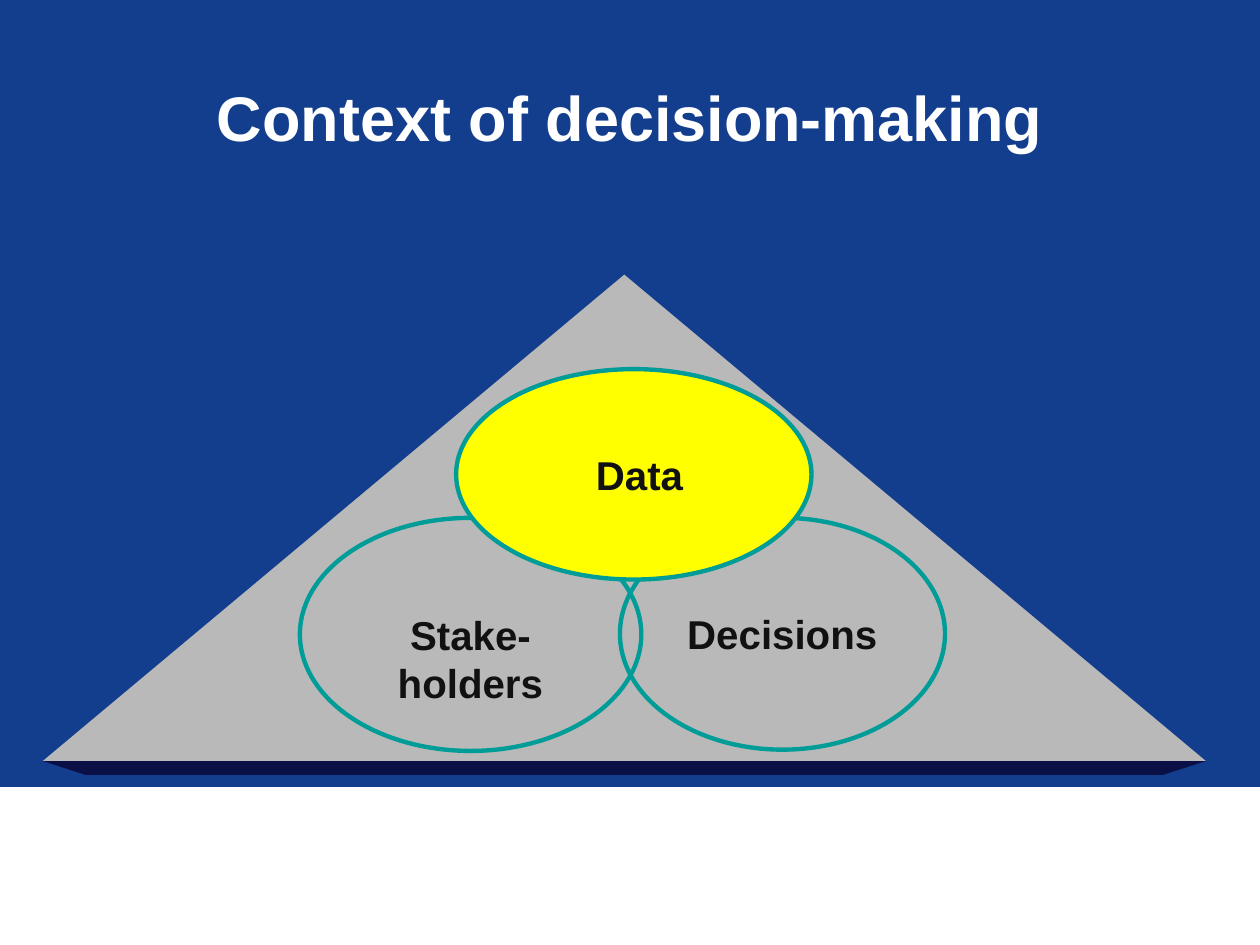
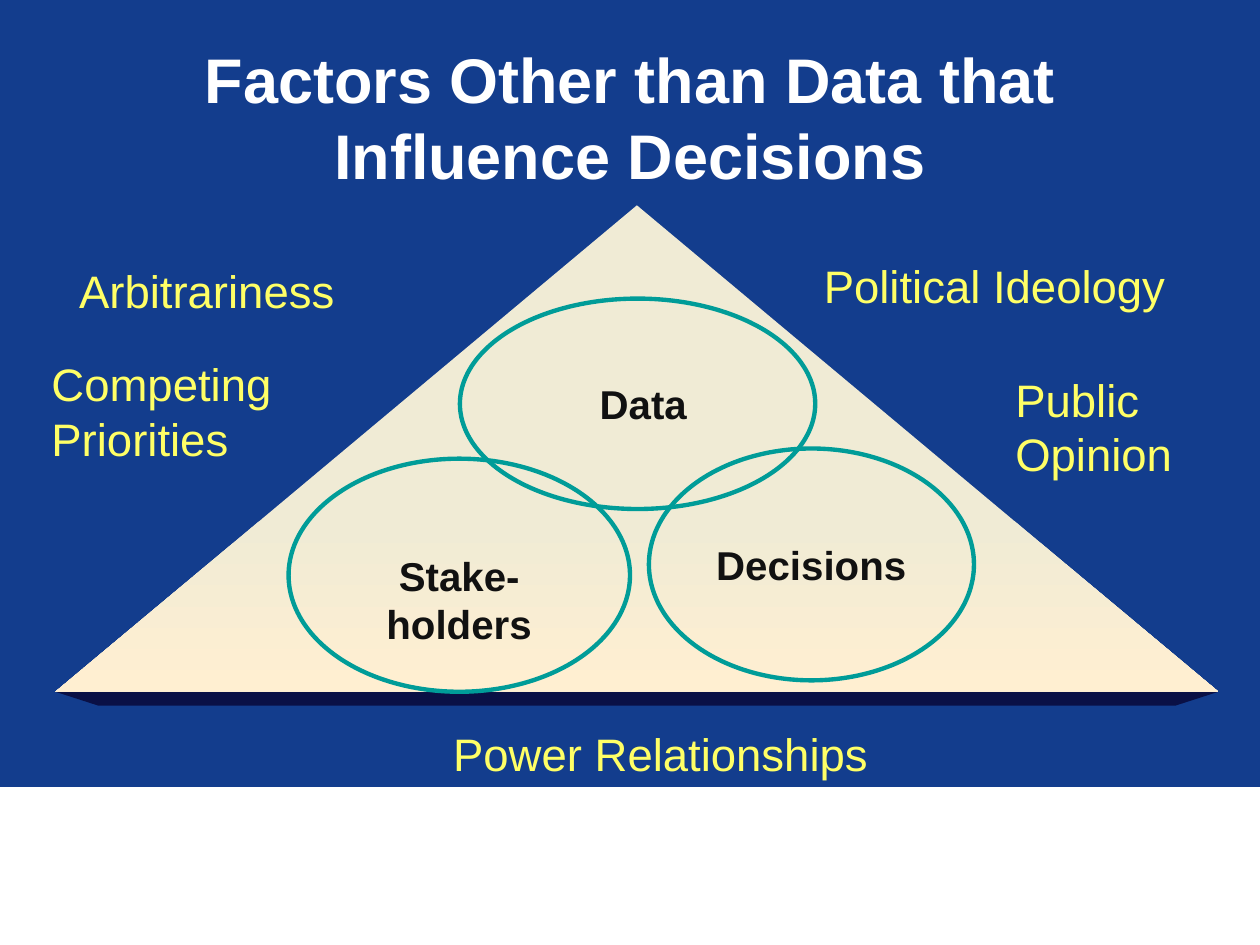
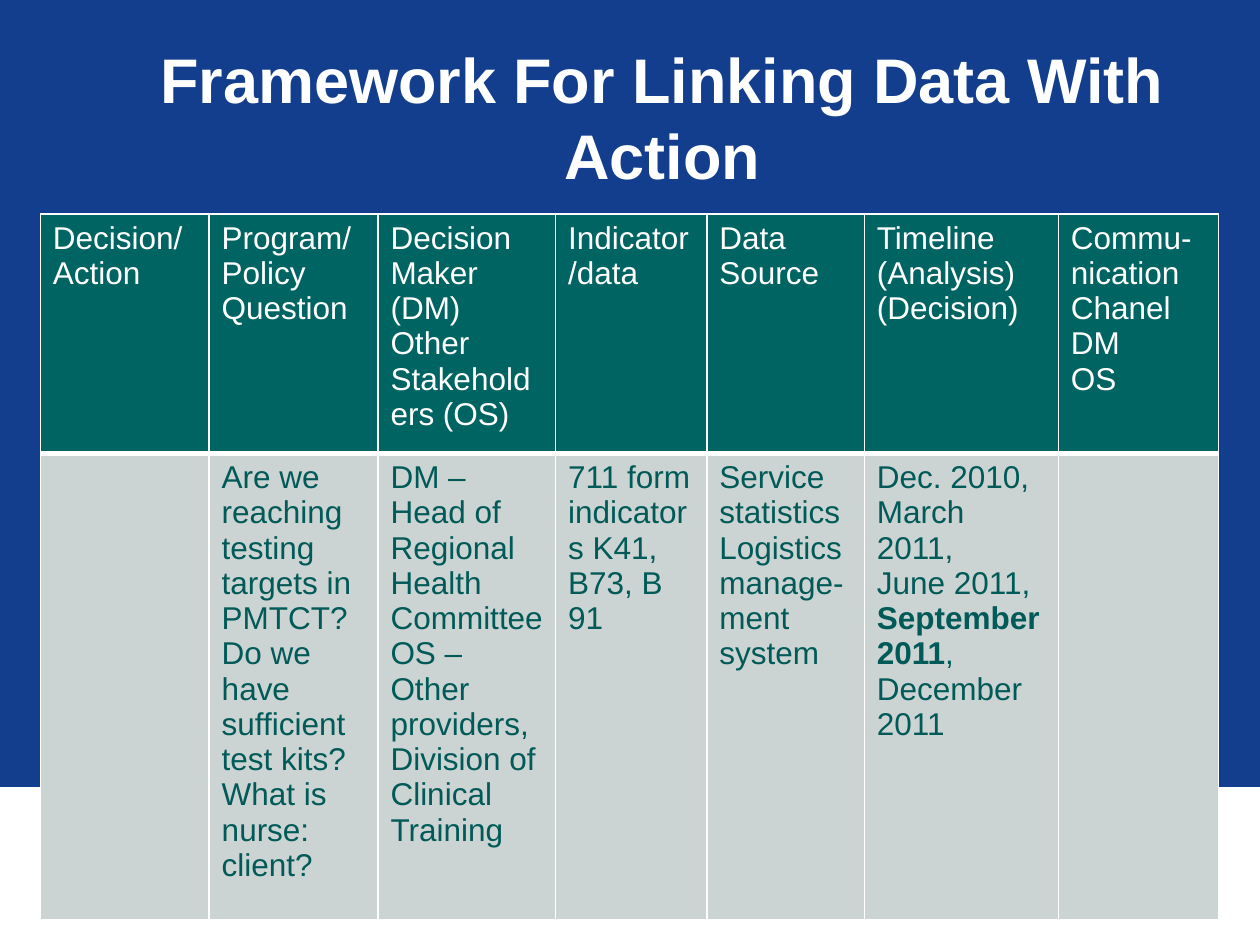
from lxml import etree
from pptx import Presentation
from pptx.dml.color import RGBColor
from pptx.enum.shapes import MSO_SHAPE as SHAPE
from pptx.enum.text import MSO_ANCHOR as ANCHOR, PP_ALIGN as ALIGN
from pptx.oxml.ns import qn
from pptx.util import Inches, Pt

FONT = "Arial"
BLUE, WHITE, TEAL, YELLOW = "133D8D", "FFFFFF", "009C98", "FFFF00"
INK, FACTOR, DEPTH, GRAY = "111111", "FFFF66", "0A1045", "B9B9B9"
HEAD_FILL, BODY_FILL, BODY_TEXT = "006462", "CCD3D3", "005A58"
CREAM = [(0, "F0EBD5"), (0.65, "F0EBD5"), (1, "FFEFD1")]

COLUMNS = [1.34, 1.34, 1.41, 1.2, 1.25, 1.54, 1.27]
ROWS = [1.9, 3.7]
HEADER = [
    ["Decision/ Action"],
    ["Program/Policy Question"],
    ["Decision Maker (DM) Other Stakeholders (OS)"],
    ["Indicator/data"],
    ["Data Source"],
    ["Timeline", "(Analysis)", "(Decision)"],
    ["Commu-nication Chanel", "DM", "OS"],
]
BODY = [
    [],
    ["Are we reaching testing targets in PMTCT?",
     "Do we have sufficient test kits?", "What is nurse:", "client?"],
    ["DM – Head of Regional Health Committee OS – Other providers, "
     "Division of Clinical Training"],
    ["711 form indicators K41, B73, B 91"],
    ["Service statistics Logistics manage-ment system"],
    ["Dec. 2010,", "March 2011,",
     [("June 2011, ", False), ("September 2011", True), (",", False)],
     "December 2011"],
    [],
]


def rgb(color):
    return RGBColor.from_string(color)


def inches(*values):
    return [Inches(v) for v in values]


def add_run(p, text, size, color, bold=False):
    r = p.add_run()
    r.text = text
    r.font.name = FONT
    r.font.size = Pt(size)
    r.font.bold = bold
    r.font.color.rgb = rgb(color)


def add_text(slide, box, text, size, color, bold=False,
             align=ALIGN.LEFT, anchor=ANCHOR.TOP):
    tf = slide.shapes.add_textbox(*inches(*box)).text_frame
    tf.word_wrap = True
    tf.vertical_anchor = anchor
    p = tf.paragraphs[0]
    p.alignment = align
    add_run(p, text, size, color, bold)


def paint(sp, fill=None, line=None, width=0.75):
    sp.shadow.inherit = False
    if fill:
        sp.fill.solid()
        sp.fill.fore_color.rgb = rgb(fill)
    else:
        sp.fill.background()
    if line:
        sp.line.color.rgb = rgb(line)
        sp.line.width = Pt(width)
    else:
        sp.line.fill.background()


def add_base(prs, title, title_box=(0.75, 0.3, 8.5, 1.25)):
    """Blank slide with the blue ground, white bottom band and title."""
    slide = prs.slides.add_slide(prs.slide_layouts[6])
    slide.background.fill.solid()
    slide.background.fill.fore_color.rgb = rgb(BLUE)
    band = slide.shapes.add_shape(SHAPE.RECTANGLE, *inches(0, 6.25, 10, 1.25))
    paint(band, WHITE, WHITE)
    add_text(slide, title_box, title, 36, WHITE, True,
             ALIGN.CENTER, ANCHOR.MIDDLE)
    return slide


def set_gradient(sp, stops):
    """Top-to-bottom gradient through (position, colour) stops."""
    sp.fill.gradient()
    sp.fill.gradient_angle = 270
    gs_list = sp.fill._fill._gradFill.find(qn("a:gsLst"))
    for gs in list(gs_list):
        gs_list.remove(gs)
    for position, color in stops:
        gs = etree.SubElement(gs_list, qn("a:gs"), pos=str(int(position * 100000)))
        etree.SubElement(gs, qn("a:srgbClr"), val=color)


def add_pyramid(slide, box, fill=None, gradient=None):
    """Triangle standing on a thin dark underside."""
    x, y, w, h = box
    base, inset, depth = y + h, 0.34, 0.11
    builder = slide.shapes.build_freeform(*inches(x, base))
    builder.add_line_segments([
        inches(x + w, base),
        inches(x + w - inset, base + depth),
        inches(x + inset, base + depth),
    ])
    paint(builder.convert_to_shape(), DEPTH)
    sp = slide.shapes.add_shape(SHAPE.ISOSCELES_TRIANGLE, *inches(*box))
    paint(sp, fill)
    if gradient:
        set_gradient(sp, gradient)


def add_oval(slide, box, label, fill=None, push_right=0, push_down=0):
    sp = slide.shapes.add_shape(SHAPE.OVAL, *inches(*box))
    paint(sp, fill, TEAL, 2.5)
    tf = sp.text_frame
    tf.word_wrap = True
    tf.vertical_anchor = ANCHOR.MIDDLE
    tf.margin_left = Inches(0.1 + push_right)
    tf.margin_top = Inches(0.05 + push_down)
    p = tf.paragraphs[0]
    p.alignment = ALIGN.CENTER
    add_run(p, label, 23, INK, True)


def add_ovals(slide, stakeholders, decisions, data, data_fill=None):
    """The three overlapping ovals, each placed by its top left corner."""
    add_oval(slide, (*stakeholders, 2.71, 1.85), "Stake-holders", push_down=0.38)
    add_oval(slide, (*decisions, 2.58, 1.84), "Decisions")
    add_oval(slide, (*data, 2.82, 1.67), "Data", data_fill, push_right=0.09)


def set_borders(cell, bottom):
    tc_pr = cell._tc.get_or_add_tcPr()
    sides = [("L", 1), ("R", 1), ("T", 1), ("B", bottom)]
    for i, (side, width) in enumerate(sides):
        ln = etree.Element(qn(f"a:ln{side}"), w=str(Pt(width)))
        fill = etree.SubElement(ln, qn("a:solidFill"))
        etree.SubElement(fill, qn("a:srgbClr"), val=WHITE)
        tc_pr.insert(i, ln)


def fill_cell(cell, paragraphs, fill, color, bottom):
    cell.fill.solid()
    cell.fill.fore_color.rgb = rgb(fill)
    set_borders(cell, bottom)
    tf = cell.text_frame
    for i, content in enumerate(paragraphs):
        p = tf.add_paragraph() if i else tf.paragraphs[0]
        runs = [(content, False)] if isinstance(content, str) else content
        for text, bold in runs:
            add_run(p, text, 18, color, bold)


def add_framework_table(slide, left, top):
    frame = slide.shapes.add_table(
        len(ROWS), len(COLUMNS), *inches(left, top, sum(COLUMNS), sum(ROWS)))
    table = frame.table
    for column, width in zip(table.columns, COLUMNS):
        column.width = Inches(width)
    for row, height in zip(table.rows, ROWS):
        row.height = Inches(height)
    for i, (head, body) in enumerate(zip(HEADER, BODY)):
        fill_cell(table.cell(0, i), head, HEAD_FILL, WHITE, 3)
        fill_cell(table.cell(1, i), body, BODY_FILL, BODY_TEXT, 1)


def context_slide(prs):
    slide = add_base(prs, "Context of decision-making")
    add_pyramid(slide, (0.34, 2.18, 9.23, 3.86), fill=GRAY)
    add_ovals(slide, (2.38, 4.11), (4.92, 4.11), (3.62, 2.93), YELLOW)


def factors_slide(prs):
    slide = add_base(prs, "Factors Other than Data that Influence Decisions")
    add_pyramid(slide, (0.44, 1.63, 9.23, 3.86), gradient=CREAM)
    add_ovals(slide, (2.29, 3.64), (5.15, 3.56), (3.65, 2.37))
    factors = [
        ("Political Ideology", (6.44, 2, 3.17, 0.54), ALIGN.LEFT),
        ("Competing Priorities", (0.31, 2.78, 2.22, 0.98), ALIGN.LEFT),
        ("Power Relationships", (2.53, 5.71, 5.43, 0.54), ALIGN.CENTER),
        ("Public Opinion", (7.96, 2.9, 1.64, 0.98), ALIGN.LEFT),
        ("Arbitrariness", (0.53, 2.04, 2.47, 0.54), ALIGN.LEFT),
    ]
    for text, box, align in factors:
        add_text(slide, box, text, 26, FACTOR, align=align)


def framework_slide(prs):
    slide = add_base(prs, "Framework For Linking Data With Action",
                     (1.01, 0.3, 8.49, 1.25))
    add_framework_table(slide, 0.32, 1.7)


def main():
    prs = Presentation()
    prs.slide_width, prs.slide_height = inches(10, 7.5)
    context_slide(prs)
    factors_slide(prs)
    framework_slide(prs)
    prs.save("out.pptx")


if __name__ == "__main__":
    main()
